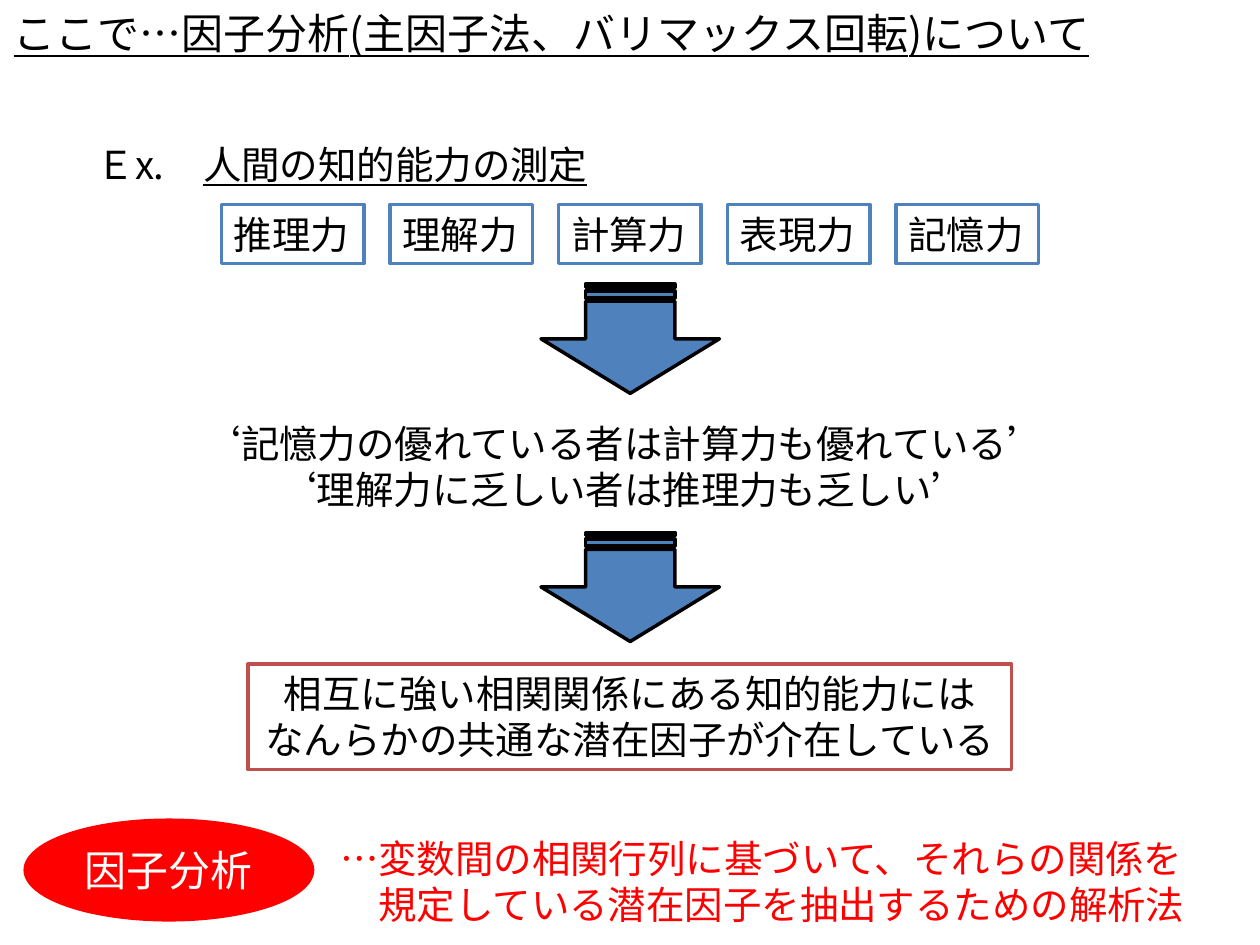
from lxml import etree
from pptx import Presentation
from pptx.dml.color import RGBColor
from pptx.enum.shapes import MSO_SHAPE
from pptx.enum.text import MSO_ANCHOR, MSO_AUTO_SIZE, PP_ALIGN
from pptx.oxml.ns import qn
from pptx.util import Pt

BLACK = RGBColor(0x00, 0x00, 0x00)
WHITE = RGBColor(0xFF, 0xFF, 0xFF)
BLUE = RGBColor(0x4F, 0x81, 0xBD)
BRICK = RGBColor(0xC0, 0x50, 0x4D)
RED = RGBColor(0xFF, 0x00, 0x00)

RECTANGLE = MSO_SHAPE.RECTANGLE
ELLIPSE = MSO_SHAPE.OVAL
STRIPED_ARROW = MSO_SHAPE.STRIPED_RIGHT_ARROW
LEFT, CENTER = PP_ALIGN.LEFT, PP_ALIGN.CENTER
TOP, MIDDLE = MSO_ANCHOR.TOP, MSO_ANCHOR.MIDDLE
FIT_SHAPE = MSO_AUTO_SIZE.SHAPE_TO_FIT_TEXT

FONT = "Noto Sans CJK JP"
ABILITIES = ["推理力", "理解力", "計算力", "表現力", "記憶力"]
ABILITY_LEFT, ABILITY_STEP = 126.6, 96.35
ARROW_TOPS = [142.6, 284.4]


def format_run(run, size, color):
    """Apply the slide font to Latin and East Asian characters of a run."""
    run.font.size = Pt(size)
    run.font.color.rgb = color
    run.font.name = FONT
    etree.SubElement(run.font._element, qn("a:ea"), typeface=FONT)


def write_lines(frame, lines, size=22, color=BLACK, aligns=(LEFT, LEFT)):
    """Write one paragraph per line in a frame that grows with its text."""
    frame.text = "\n".join(lines)
    frame.word_wrap = False
    frame.auto_size = FIT_SHAPE
    frame.vertical_anchor = TOP
    for paragraph, align in zip(frame.paragraphs, aligns):
        paragraph.alignment = align
        for run in paragraph.runs:
            format_run(run, size, color)


def add_label(slide, box, lines, size=22, color=BLACK):
    """Add unframed text and return its frame."""
    frame = slide.shapes.add_textbox(*map(Pt, box)).text_frame
    write_lines(frame, lines, size, color)
    return frame


def add_figure(shapes, kind, box, fill, line=None):
    """Add a flat preset shape with an optional outline."""
    figure = shapes.add_shape(kind, *map(Pt, box))
    figure.shadow.inherit = False
    figure.fill.solid()
    figure.fill.fore_color.rgb = fill
    if line is None:
        figure.line.fill.background()
    else:
        figure.line.color.rgb = line
        figure.line.width = Pt(2)
    return figure


def add_abilities(slide):
    """Add the evenly spaced row of measured abilities as a group."""
    row = slide.shapes.add_group_shape()
    for index, ability in enumerate(ABILITIES):
        box = (ABILITY_LEFT + index * ABILITY_STEP, 116.8, 81.4, 33.9)
        card = add_figure(row.shapes, RECTANGLE, box, WHITE, BLUE)
        write_lines(card.text_frame, [ability])


def add_down_arrow(slide, top):
    """Add a striped arrow turned to point downwards."""
    arrow = add_figure(slide.shapes, STRIPED_ARROW, (328.9, top, 62.4, 102), BLUE, BLACK)
    arrow.rotation = 90


def main():
    """Build the factor analysis slide."""
    prs = Presentation()
    prs.slide_width, prs.slide_height = Pt(720), Pt(540)
    slide = prs.slides.add_slide(prs.slide_layouts[6])

    title = add_label(slide, (0.7, 0.7, 644.4, 36),
                      ["ここで…因子分析(主因子法、バリマックス回転)について"], 24)
    title.paragraphs[0].runs[0].font.underline = True

    example = add_label(slide, (48.2, 77, 314.6, 33.9), ["Ｅx.\u3000".replace("\u3000", "　")])
    subject = example.paragraphs[0].add_run()
    subject.text = "人間の知的能力の測定"
    format_run(subject, 22, BLACK)
    subject.font.underline = True

    add_abilities(slide)
    add_down_arrow(slide, ARROW_TOPS[0])

    findings = add_figure(slide.shapes, RECTANGLE, (108.7, 236.2, 503.3, 60.5), WHITE)
    write_lines(findings.text_frame,
                ["‘記憶力の優れている者は計算力も優れている’", "‘理解力に乏しい者は推理力も乏しい’"],
                aligns=(LEFT, CENTER))
    add_down_arrow(slide, ARROW_TOPS[1])

    conclusion = add_figure(slide.shapes, RECTANGLE, (141.8, 379.4, 436.3, 60.5), WHITE, BRICK)
    write_lines(conclusion.text_frame,
                ["相互に強い相関関係にある知的能力には", "なんらかの共通な潜在因子が介在している"],
                aligns=(CENTER, CENTER))

    term = add_figure(slide.shapes, ELLIPSE, (14.4, 468.7, 164.2, 56.9), RED, RED)
    term.text_frame.text = "因子分析"
    term.text_frame.vertical_anchor = MIDDLE
    term.text_frame.paragraphs[0].alignment = CENTER
    format_run(term.text_frame.paragraphs[0].runs[0], 24, WHITE)

    add_label(slide, (187.2, 473.8, 503.3, 60.5),
              ["…変数間の相関行列に基づいて、それらの関係を", "　規定している潜在因子を抽出するための解析法"],
              color=RED)
    prs.save("out.pptx")


if __name__ == "__main__":
    main()
